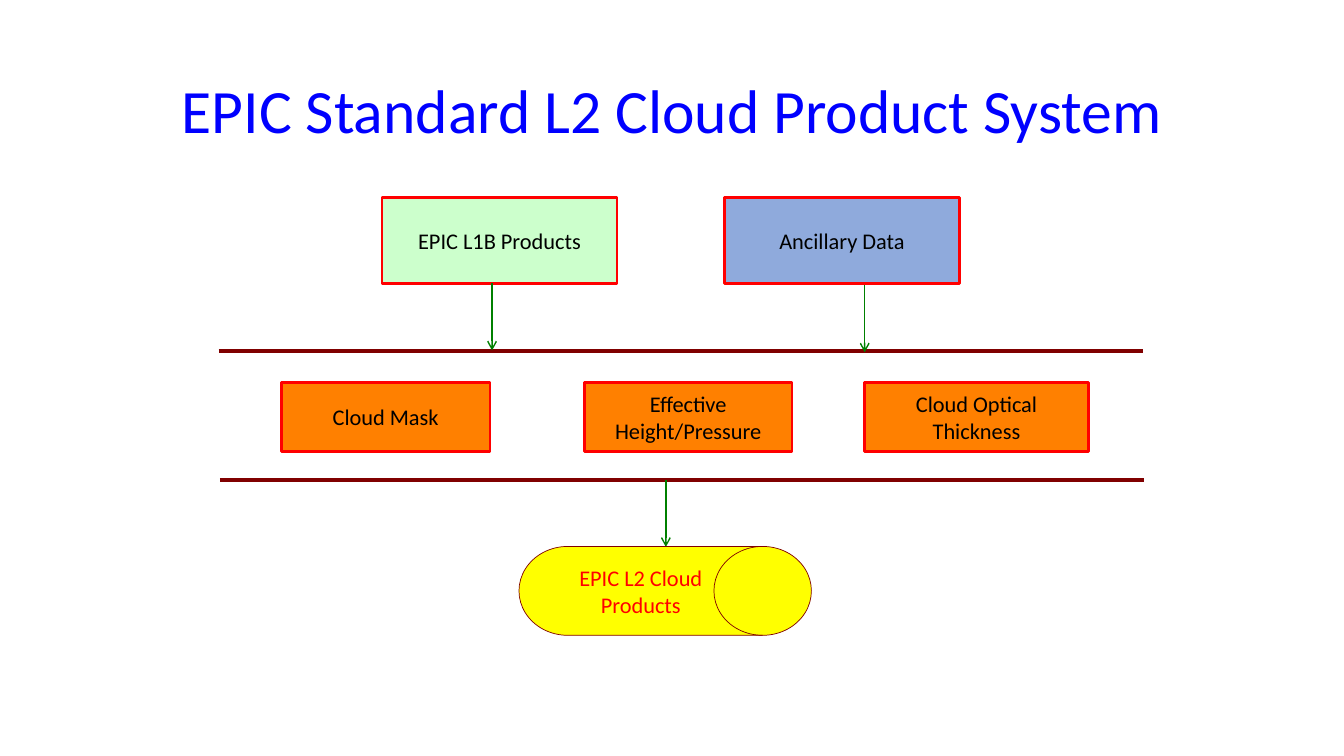
import pptx
import pptx.dml.color
import pptx.enum.shapes
import pptx.enum.text
import pptx.oxml
import pptx.oxml.ns
import pptx.util

Cm = pptx.util.Cm
Pt = pptx.util.Pt
Shapes = pptx.enum.shapes.MSO_SHAPE


def color(value):
    return pptx.dml.color.RGBColor.from_string(value)


def write(frame, text, size=16, ink="000000", font="Calibri", spacing=1.0):
    frame.word_wrap = True
    frame.auto_size = pptx.enum.text.MSO_AUTO_SIZE.NONE
    frame.vertical_anchor = pptx.enum.text.MSO_ANCHOR.MIDDLE
    paragraph = frame.paragraphs[0]
    paragraph.alignment = pptx.enum.text.PP_ALIGN.CENTER
    paragraph.line_spacing = spacing
    paragraph.space_before = Pt(0)
    span = paragraph.add_run()
    span.text = text
    span.font.name = font
    span.font.size = Pt(size)
    span.font.color.rgb = color(ink)


class Diagram:
    border = "FF0000"
    arrow_color = "008000"
    rule_color = "800000"

    def __init__(self, page):
        self.page = page

    def title(self, text, left, top, width, height):
        box = self.page.shapes.title
        box.left, box.top = Cm(left), Cm(top)
        box.width, box.height = Cm(width), Cm(height)
        write(box.text_frame, text, size=44, ink="0000FF", spacing=0.9)

    def box(self, text, left, top, width, height, fill,
            kind=Shapes.RECTANGLE, border=border, weight=2, ink="000000"):
        box = self.page.shapes.add_shape(
            kind, Cm(left), Cm(top), Cm(width), Cm(height))
        box.shadow.inherit = False
        box.fill.solid()
        box.fill.fore_color.rgb = color(fill)
        box.line.color.rgb = color(border)
        box.line.width = Pt(weight)
        write(box.text_frame, text, ink=ink)

    def line(self, start, end, ink, weight):
        line = self.page.shapes.add_connector(
            pptx.enum.shapes.MSO_CONNECTOR.STRAIGHT,
            Cm(start[0]), Cm(start[1]), Cm(end[0]), Cm(end[1]))
        line.line.color.rgb = color(ink)
        line.line.width = Pt(weight)
        properties = line._element.spPr
        properties.append(pptx.oxml.parse_xml(
            f"<a:effectLst {pptx.oxml.ns.nsdecls('a')}/>"))
        return line

    def rule(self, left, top, width=23.29):
        self.line((left, top), (left + width, top), self.rule_color, 3)

    def arrow(self, left, top, length=1.69):
        arrow = self.line((left, top), (left, top + length), self.arrow_color, 1)
        arrow.line._get_or_add_ln().append(pptx.oxml.parse_xml(
            f"<a:tailEnd {pptx.oxml.ns.nsdecls('a')} type='arrow'/>"))


def main():
    deck = pptx.Presentation()
    deck.slide_width, deck.slide_height = Cm(33.87), Cm(19.05)
    diagram = Diagram(deck.slides.add_slide(deck.slide_layouts[5]))

    diagram.title("EPIC Standard L2 Cloud Product System", 2.34, 1.02, 29.21, 3.68)

    for text, left, fill in (("EPIC L1B Products", 9.63, "CCFFCC"),
                             ("Ancillary Data", 18.26, "8FAADC")):
        diagram.box(text, left, 4.98, 5.92, 2.16, fill)

    for text, left, width in (("Cloud Mask", 7.09, 5.26),
                              ("Effective Height/Pressure", 14.73, 5.23),
                              ("Cloud Optical Thickness", 21.79, 5.64)):
        diagram.box(text, left, 9.63, width, 1.75, "FF8000")

    for left, top in ((5.51, 8.84), (5.54, 12.09)):
        diagram.rule(left, top)

    for left, top in ((12.4, 7.14), (21.79, 7.19), (16.78, 12.09)):
        diagram.arrow(left, top)

    diagram.box("EPIC L2 Cloud Products", 13.08, 13.77, 7.37, 2.24, "FFFF00",
                kind=Shapes.FLOWCHART_DIRECT_ACCESS_STORAGE,
                border=Diagram.rule_color, weight=0.5, ink="FF0000")

    deck.save("out.pptx")


if __name__ == "__main__":
    main()
